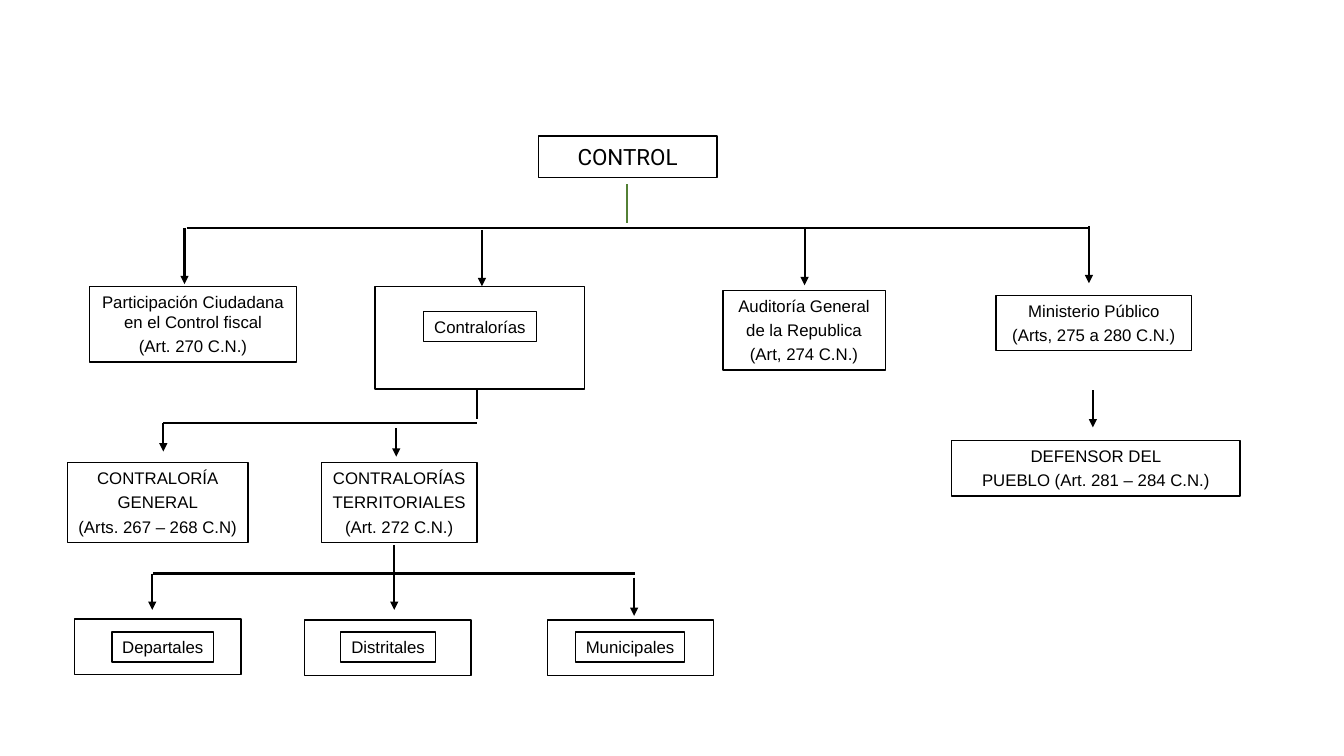
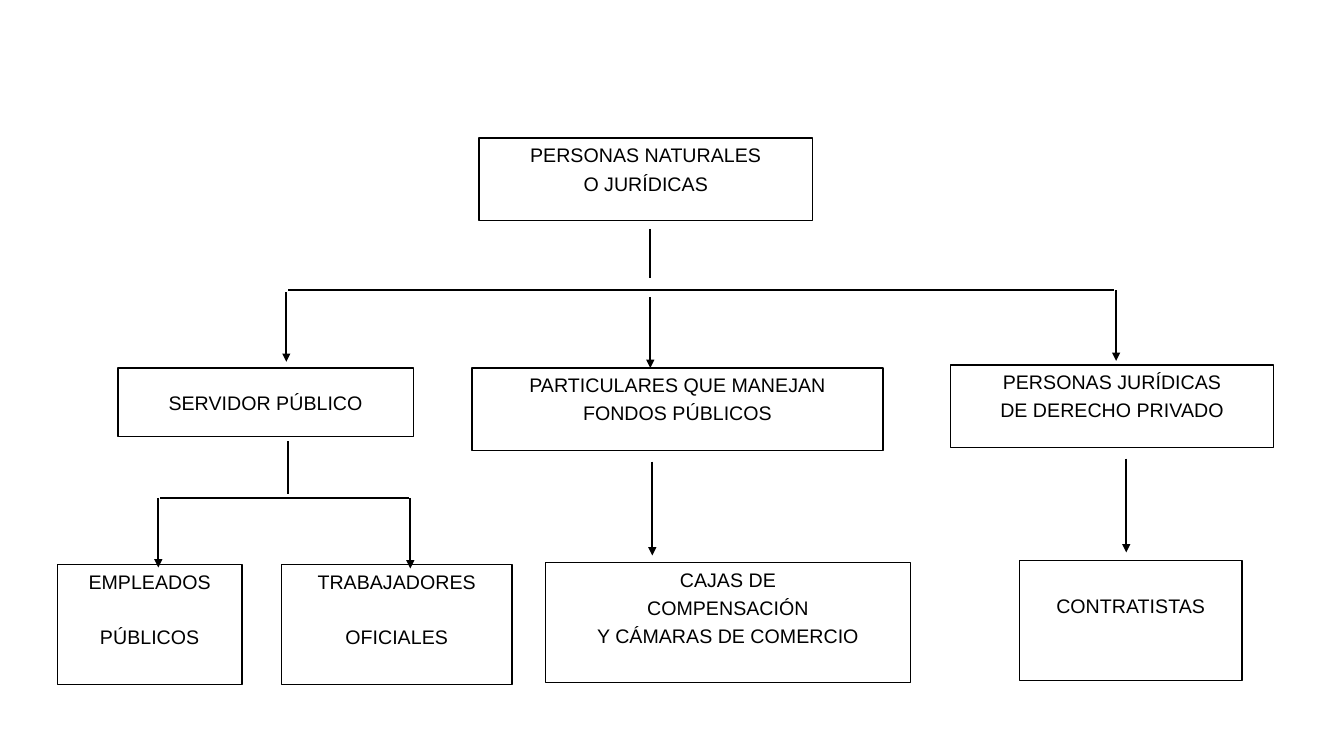
from dataclasses import dataclass

import pptx
import pptx.dml.color
import pptx.enum.shapes
import pptx.enum.text
import pptx.oxml
import pptx.oxml.ns
import pptx.util
from pptx.util import Inches

COLORS = {"paper": "FFFFFF", "ink": "000000", "stem": "538035"}
TOP = pptx.enum.text.MSO_ANCHOR.TOP
MIDDLE = pptx.enum.text.MSO_ANCHOR.MIDDLE
FRAME_FORMAT = {
    "word_wrap": True,
    "auto_size": pptx.enum.text.MSO_AUTO_SIZE.NONE,
    "margin_left": Inches(0.05),
    "margin_right": Inches(0.05),
    "margin_bottom": Inches(0.05),
}
TITLE_ONLY_LAYOUT = 5
GAP_RATIO = 0.25  # space between paragraphs, as a share of the text size


@dataclass(frozen=True)
class Box:
    left: float
    top: float
    width: float
    height: float
    lines: tuple[str, ...] = ()
    size: float = 12
    font: str = "Arial"
    anchor: pptx.enum.text.MSO_ANCHOR = TOP
    gap: float | None = None
    inset: float = 0.05


@dataclass(frozen=True)
class Line:
    x1: float
    y1: float
    x2: float
    y2: float
    arrow: bool = False
    color: str = "ink"
    weight: float = 1.5


@dataclass(frozen=True)
class Chart:
    title: Box
    boxes: tuple[Box, ...]
    lines: tuple[Line, ...]


def drop(x: float, top: float, bottom: float) -> Line:
    """Return a vertical arrow pointing down."""
    return Line(x, top, x, bottom, arrow=True)


def rgb(name: str) -> pptx.dml.color.RGBColor:
    return pptx.dml.color.RGBColor.from_string(COLORS[name])


def format_box(shape, box: Box) -> None:
    placement = {
        "left": Inches(box.left),
        "top": Inches(box.top),
        "width": Inches(box.width),
        "height": Inches(box.height),
    }
    for name, value in placement.items():
        setattr(shape, name, value)
    shape.shadow.inherit = False
    shape.fill.solid()
    shape.fill.fore_color.rgb = rgb("paper")
    shape.line.color.rgb = rgb("ink")
    shape.line.width = pptx.util.Pt(1)
    if box.lines:
        write_lines(shape.text_frame, box)


def write_lines(frame, box: Box) -> None:
    frame_format = FRAME_FORMAT | {
        "vertical_anchor": box.anchor,
        "margin_top": Inches(box.inset),
    }
    for name, value in frame_format.items():
        setattr(frame, name, value)
    gap = box.size * GAP_RATIO if box.gap is None else box.gap
    font_format = {
        "name": box.font, "size": pptx.util.Pt(box.size), "bold": False}
    for index, text in enumerate(box.lines):
        paragraph = frame.add_paragraph() if index else frame.paragraphs[0]
        paragraph.alignment = pptx.enum.text.PP_ALIGN.CENTER
        paragraph.space_before = pptx.util.Pt(gap if index else 0)
        run = paragraph.add_run()
        run.text = text
        for name, value in font_format.items():
            setattr(run.font, name, value)
        run.font.color.rgb = rgb("ink")


def draw_line(slide, line: Line) -> None:
    ends = (Inches(value) for value in (line.x1, line.y1, line.x2, line.y2))
    connector = slide.shapes.add_connector(
        pptx.enum.shapes.MSO_CONNECTOR.STRAIGHT, *ends)
    connector.line.color.rgb = rgb(line.color)
    connector.line.width = pptx.util.Pt(line.weight)
    namespace = pptx.oxml.ns.nsdecls("a")
    properties = connector._element.spPr
    if line.arrow:
        properties.find(pptx.oxml.ns.qn("a:ln")).append(
            pptx.oxml.parse_xml(f'<a:tailEnd {namespace} type="triangle"/>'))
    properties.append(pptx.oxml.parse_xml(f"<a:effectLst {namespace}/>"))


def draw_chart(presentation, chart: Chart) -> None:
    slide = presentation.slides.add_slide(
        presentation.slide_layouts[TITLE_ONLY_LAYOUT])
    format_box(slide.shapes.title, chart.title)
    for box in chart.boxes:
        shape = slide.shapes.add_shape(
            pptx.enum.shapes.MSO_SHAPE.RECTANGLE, 0, 0, 0, 0)
        format_box(shape, box)
    for line in chart.lines:
        draw_line(slide, line)


CONTROL = Chart(
    title=Box(5.34, 1.35, 1.77, 0.41, ("CONTROL",), 16, "Roboto", MIDDLE),
    boxes=(
        Box(0.89, 2.84, 2.05, 0.75,
            ("Participación Ciudadana en el Control fiscal",
             "(Art. 270 C.N.)")),
        Box(3.72, 2.84, 2.08, 1.02),
        Box(4.2, 3.09, 1.12, 0.3, ("Contralorías",)),
        Box(7.17, 2.88, 1.61, 0.79,
            ("Auditoría General", "de la Republica", "(Art, 274 C.N.)")),
        Box(9.88, 2.93, 1.94, 0.55,
            ("Ministerio Público", "(Arts, 275 a 280 C.N.)")),
        Box(9.44, 4.37, 2.86, 0.55,
            ("DEFENSOR DEL", "PUEBLO (Art. 281 – 284 C.N.)")),
        Box(0.67, 4.59, 1.79, 0.79,
            ("CONTRALORÍA", "GENERAL", "(Arts. 267 – 268 C.N)")),
        Box(3.19, 4.59, 1.54, 0.79,
            ("CONTRALORÍAS", "TERRITORIALES", "(Art. 272 C.N.)")),
        Box(0.74, 6.14, 1.65, 0.55),
        Box(1.11, 6.27, 1.01, 0.3, ("Departales",)),
        Box(3.02, 6.15, 1.65, 0.55),
        Box(3.38, 6.27, 0.94, 0.3, ("Distritales",)),
        Box(5.43, 6.15, 1.65, 0.55),
        Box(5.71, 6.27, 1.08, 0.3, ("Municipales",)),
    ),
    lines=(
        Line(6.22, 1.83, 6.22, 2.21, color="stem", weight=1),
        Line(1.85, 2.26, 10.81, 2.26),
        drop(1.83, 2.26, 2.82),
        drop(4.78, 2.28, 2.84),
        drop(7.98, 2.26, 2.83),
        drop(10.8, 2.24, 2.81),
        drop(10.84, 3.87, 4.24),
        Line(4.73, 3.85, 4.73, 4.16),
        Line(4.73, 4.2, 1.62, 4.2),
        drop(1.62, 4.2, 4.48),
        drop(3.93, 4.25, 4.53),
        Line(1.52, 5.69, 6.3, 5.69),
        drop(1.51, 5.69, 6.05),
        drop(3.91, 5.41, 6.05),
        drop(6.29, 5.73, 6.11),
    ),
)

PERSONAS = Chart(
    title=Box(4.75, 1.37, 3.31, 0.82,
              ("PERSONAS NATURALES", "O JURÍDICAS"), 14),
    boxes=(
        Box(1.17, 3.65, 2.93, 0.68, ("SERVIDOR PÚBLICO",), 14, anchor=MIDDLE),
        Box(4.68, 3.65, 4.08, 0.82,
            ("PARTICULARES QUE MANEJAN", "FONDOS PÚBLICOS"), 14),
        Box(9.43, 3.62, 3.2, 0.82,
            ("PERSONAS JURÍDICAS", "DE DERECHO PRIVADO"), 14),
        Box(0.57, 5.6, 1.83, 1.19, ("EMPLEADOS", "PÚBLICOS"), 14, gap=23),
        Box(2.79, 5.6, 2.29, 1.19, ("TRABAJADORES", "OFICIALES"), 14, gap=23),
        Box(5.41, 5.58, 3.62, 1.19,
            ("CAJAS DE", "COMPENSACIÓN", "Y CÁMARAS DE COMERCIO"), 14),
        Box(10.11, 5.56, 2.21, 1.19, ("CONTRATISTAS",), 14, inset=0.33),
    ),
    lines=(
        Line(6.45, 2.27, 6.45, 2.76),
        Line(2.86, 2.88, 11.05, 2.88),
        drop(2.84, 2.9, 3.59),
        drop(6.45, 2.95, 3.65),
        drop(11.07, 2.88, 3.58),
        Line(2.86, 4.38, 2.86, 4.9),
        Line(1.59, 4.94, 4.06, 4.94),
        drop(1.57, 4.94, 5.63),
        drop(4.07, 4.94, 5.64),
        drop(6.47, 4.58, 5.51),
        drop(11.17, 4.55, 5.48),
    ),
)


def main() -> None:
    presentation = pptx.Presentation()
    presentation.slide_width = Inches(13.33)
    presentation.slide_height = Inches(7.5)
    for chart in (CONTROL, PERSONAS):
        draw_chart(presentation, chart)
    presentation.save("out.pptx")


if __name__ == "__main__":
    main()
